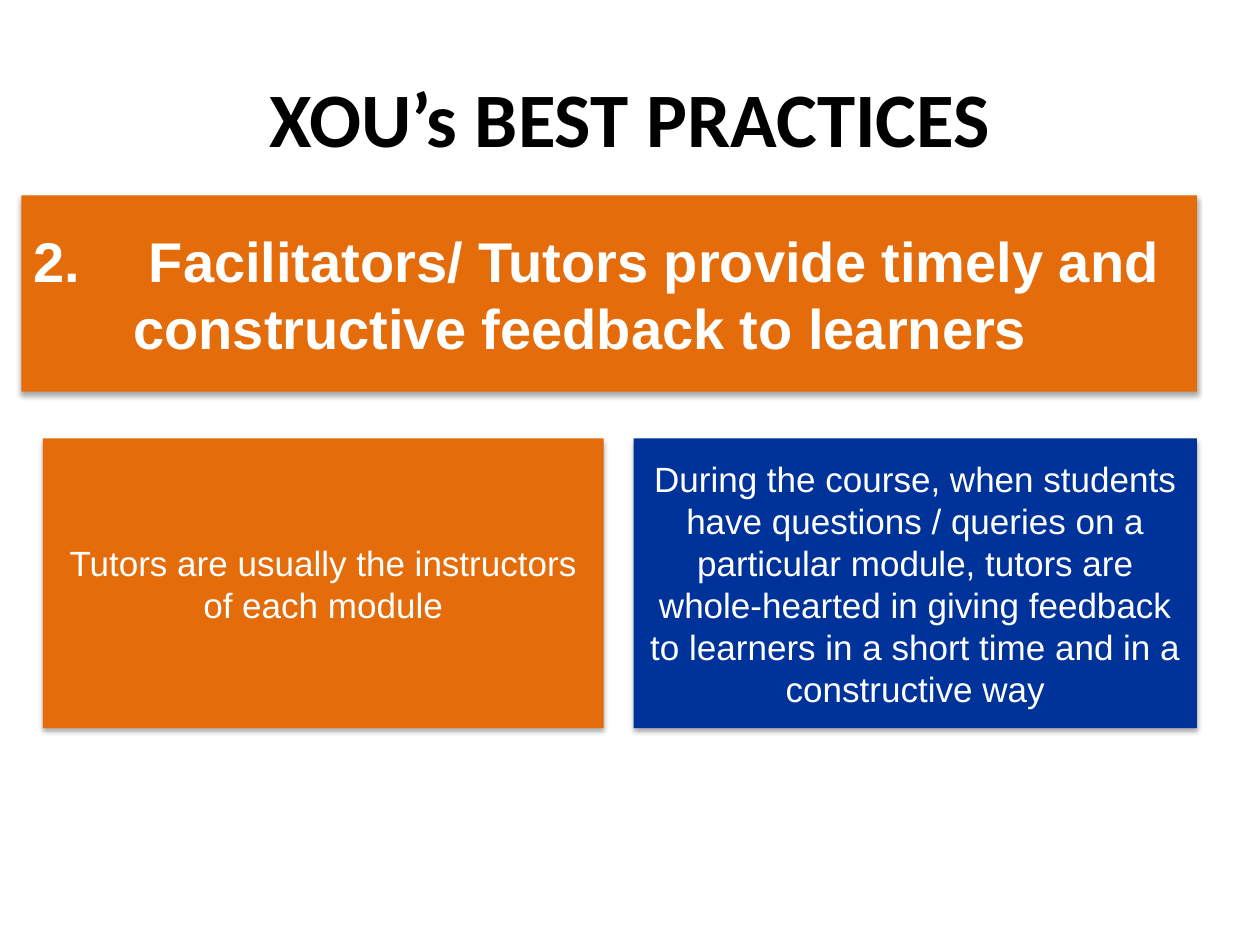
from dataclasses import dataclass

from lxml.etree import SubElement
from pptx import Presentation
from pptx.dml.color import RGBColor
from pptx.enum.shapes import MSO_SHAPE as Shape
from pptx.enum.text import MSO_ANCHOR as Anchor, PP_ALIGN as Align
from pptx.oxml.ns import qn
from pptx.util import Inches, Pt

ORANGE = RGBColor(0xE4, 0x6C, 0x0A)
BLUE = RGBColor(0x00, 0x33, 0x99)
WHITE = RGBColor(0xFF, 0xFF, 0xFF)
BLACK = RGBColor(0x00, 0x00, 0x00)


@dataclass
class Box:
    text: str
    left: float
    top: float
    width: float
    height: float
    fill: RGBColor
    size: int = 20
    bold: bool = False
    align: Align = Align.CENTER
    hang: float = 0


TOP, TALL = 3.48, 2.3
BOXES = [
    Box("2.\t Facilitators/ Tutors provide timely and constructive "
        "feedback to learners", 0.17, 1.55, 9.33, 1.56, ORANGE,
        size=32, bold=True, align=Align.LEFT, hang=0.79),
    Box("Tutors are usually the instructors of each module",
        0.34, TOP, 4.45, TALL, ORANGE),
    Box("During the course, when students have questions / queries on a "
        "particular module, tutors are whole-hearted in giving feedback to "
        "learners in a short time and in a constructive way",
        5.03, TOP, 4.47, TALL, BLUE),
]


def style(font, color: RGBColor, **values) -> None:
    """Set font attributes and colour."""
    for key, value in values.items():
        setattr(font, key, value)
    font.color.rgb = color


def shade(shape) -> None:
    """Give the shape a soft shadow straight below it."""
    shape.shadow.inherit = False
    effects = shape._element.spPr.find(qn("a:effectLst"))
    outer = SubElement(effects, qn("a:outerShdw"), blurRad=str(Pt(3.1)),
                       dist=str(Pt(1.8)), dir="5400000", rotWithShape="0")
    color = SubElement(outer, qn("a:srgbClr"), val="000000")
    SubElement(color, qn("a:alpha"), val="35000")


def draw(slide, box: Box) -> None:
    """Draw one filled text box."""
    area = map(Inches, (box.left, box.top, box.width, box.height))
    shape = slide.shapes.add_shape(Shape.RECTANGLE, *area)
    shape.fill.solid()
    shape.fill.fore_color.rgb = box.fill
    shape.line.fill.background()
    shade(shape)

    frame = shape.text_frame
    frame.word_wrap = True
    frame.vertical_anchor = Anchor.MIDDLE
    para = frame.paragraphs[0]
    para.alignment = box.align
    if box.hang:
        props = para._p.get_or_add_pPr()
        props.set("marL", str(Inches(box.hang)))
        props.set("indent", str(-Inches(box.hang)))
    run = para.add_run()
    run.text = box.text
    style(run.font, WHITE, name="Arial", size=Pt(box.size), bold=box.bold)


def main() -> None:
    deck = Presentation()
    deck.slide_width, deck.slide_height = Inches(10), Inches(7.5)
    slide = deck.slides.add_slide(deck.slide_layouts[5])

    # Title
    title = slide.shapes.title
    place = {"left": 0.5, "top": 0.3, "width": 9, "height": 1.25}
    for key, value in place.items():
        setattr(title, key, Inches(value))
    title.text_frame.vertical_anchor = Anchor.MIDDLE
    para = title.text_frame.paragraphs[0]
    para.alignment = Align.CENTER
    run = para.add_run()
    run.text = "XOU’s BEST PRACTICES"
    style(run.font, BLACK, name="Calibri", size=Pt(44), bold=True)

    # Heading bar and the two panels
    for box in BOXES:
        draw(slide, box)

    deck.save("out.pptx")


if __name__ == "__main__":
    main()
